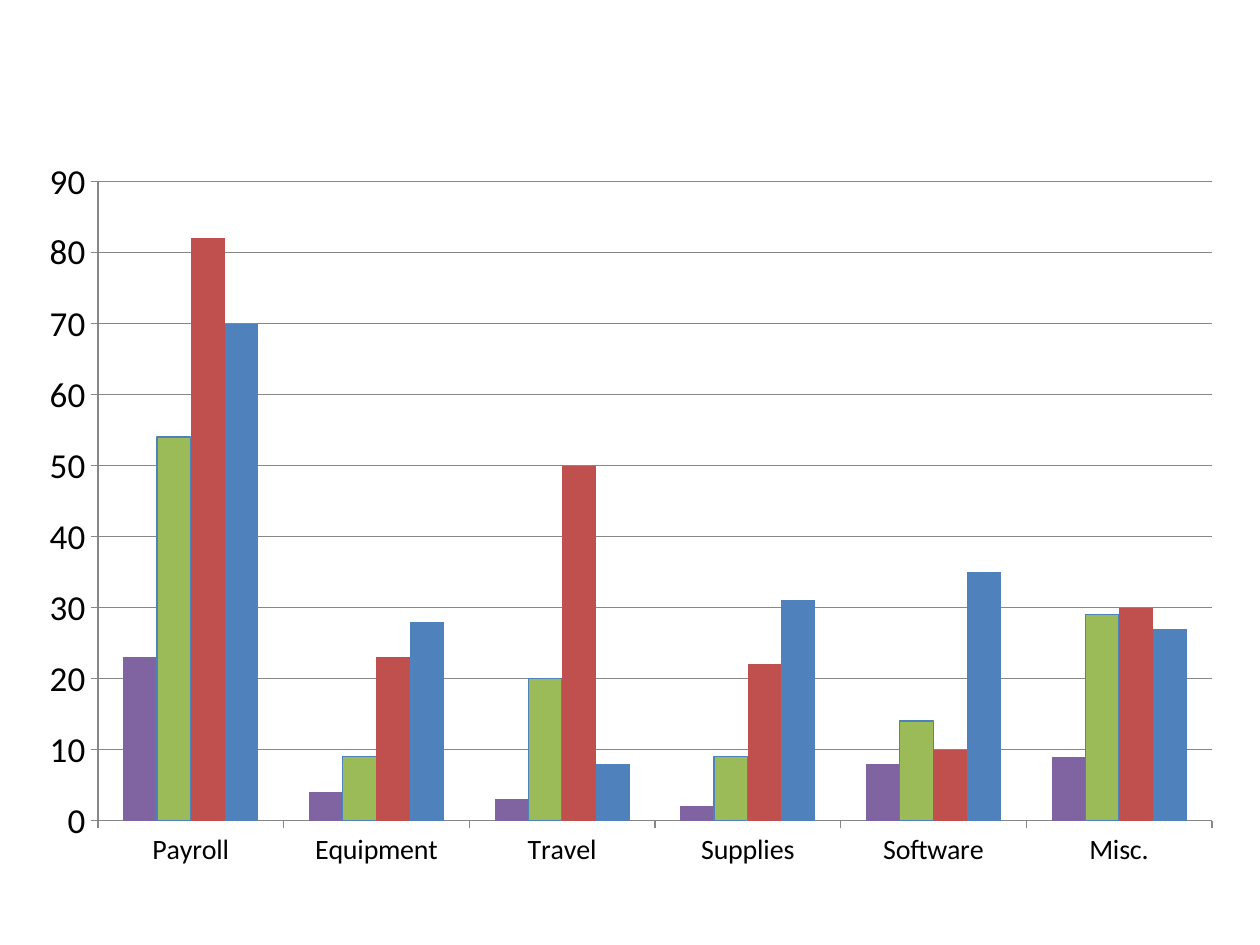
"""Build a slide with a clustered column chart of spending by category."""
import lxml.etree
import pptx
import pptx.chart.data
import pptx.dml.color
import pptx.enum.chart
import pptx.oxml
import pptx.oxml.ns
import pptx.util


def color(value):
    return pptx.dml.color.RGBColor.from_string(value)


def apply(target, values):
    for key, value in values.items():
        setattr(target, key, value)


Cm, Pt = pptx.util.Cm, pptx.util.Pt
OUTSIDE = pptx.enum.chart.XL_TICK_MARK.OUTSIDE
NO_TICK = pptx.enum.chart.XL_TICK_MARK.NONE

categories = ["Payroll", "Equipment", "Travel", "Supplies", "Software", "Misc."]
spending = [
    ("Series 1", [23, 4, 3, 2, 8, 9], "8064A2"),
    ("Series 2", [54, 9, 20, 9, 14, 29], "9BBB59"),
    ("Series 3", [82, 23, 50, 22, 10, 30], "C0504D"),
    ("Series 4", [70, 28, 8, 31, 35, 27], "4F81BD"),
]
outlines = {"Series 2": "4F81BD"}

deck = pptx.Presentation()
apply(deck, {"slide_width": Cm(25.4), "slide_height": Cm(19.05)})
slide = deck.slides.add_slide(deck.slide_layouts[6])

data = pptx.chart.data.CategoryChartData()
data.categories = categories
for name, amounts, fill in spending:
    data.add_series(name, amounts)
budget = slide.shapes.add_chart(
    pptx.enum.chart.XL_CHART_TYPE.COLUMN_CLUSTERED,
    Cm(0.51), Cm(2.92), Cm(24.41), Cm(14.81), data,
).chart
apply(budget, {"has_legend": False, "has_title": False})
apply(budget.font, {"name": "Calibri", "size": Pt(10)})
budget.font.color.rgb = color("000000")

columns = budget.plots[0]
apply(columns, {"gap_width": 150, "overlap": 0, "vary_by_categories": False})
for series, (name, amounts, fill) in zip(columns.series, spending):
    series.invert_if_negative = False
    series.format.fill.solid()
    series.format.fill.fore_color.rgb = color(fill)
    if name in outlines:
        series.format.line.color.rgb = color(outlines[name])
        series.format.line.width = Pt(0.75)
    else:
        series.format.line.fill.background()

amount_axis = budget.value_axis
apply(amount_axis, {"minimum_scale": 0, "maximum_scale": 90, "major_unit": 10,
                    "has_major_gridlines": True})
lines = [amount_axis.major_gridlines.format.line]
for axis, size in [(budget.category_axis, 16), (amount_axis, 20)]:
    apply(axis, {"major_tick_mark": OUTSIDE, "minor_tick_mark": NO_TICK})
    apply(axis.tick_labels.font, {"name": "Calibri", "size": Pt(size)})
    axis.tick_labels.font.color.rgb = color("000000")
    lines.append(axis.format.line)
for line in lines:
    line.color.rgb = color("878787")
    line.width = Pt(0.75)

qn = pptx.oxml.ns.qn
plot_area = budget.element.find(".//" + qn("c:plotArea"))
for layout in plot_area.findall(qn("c:layout")):
    plot_area.remove(layout)
layout = lxml.etree.Element(qn("c:layout"))
plot_area.insert(0, layout)
manual = lxml.etree.SubElement(layout, qn("c:manualLayout"))
for tag, value in [("layoutTarget", "inner"), ("xMode", "edge"), ("yMode", "edge"),
                   ("x", "0.06"), ("y", "0.05"), ("w", "0.92"), ("h", "0.87")]:
    lxml.etree.SubElement(manual, qn("c:" + tag)).set("val", value)

deck.save("out.pptx")
